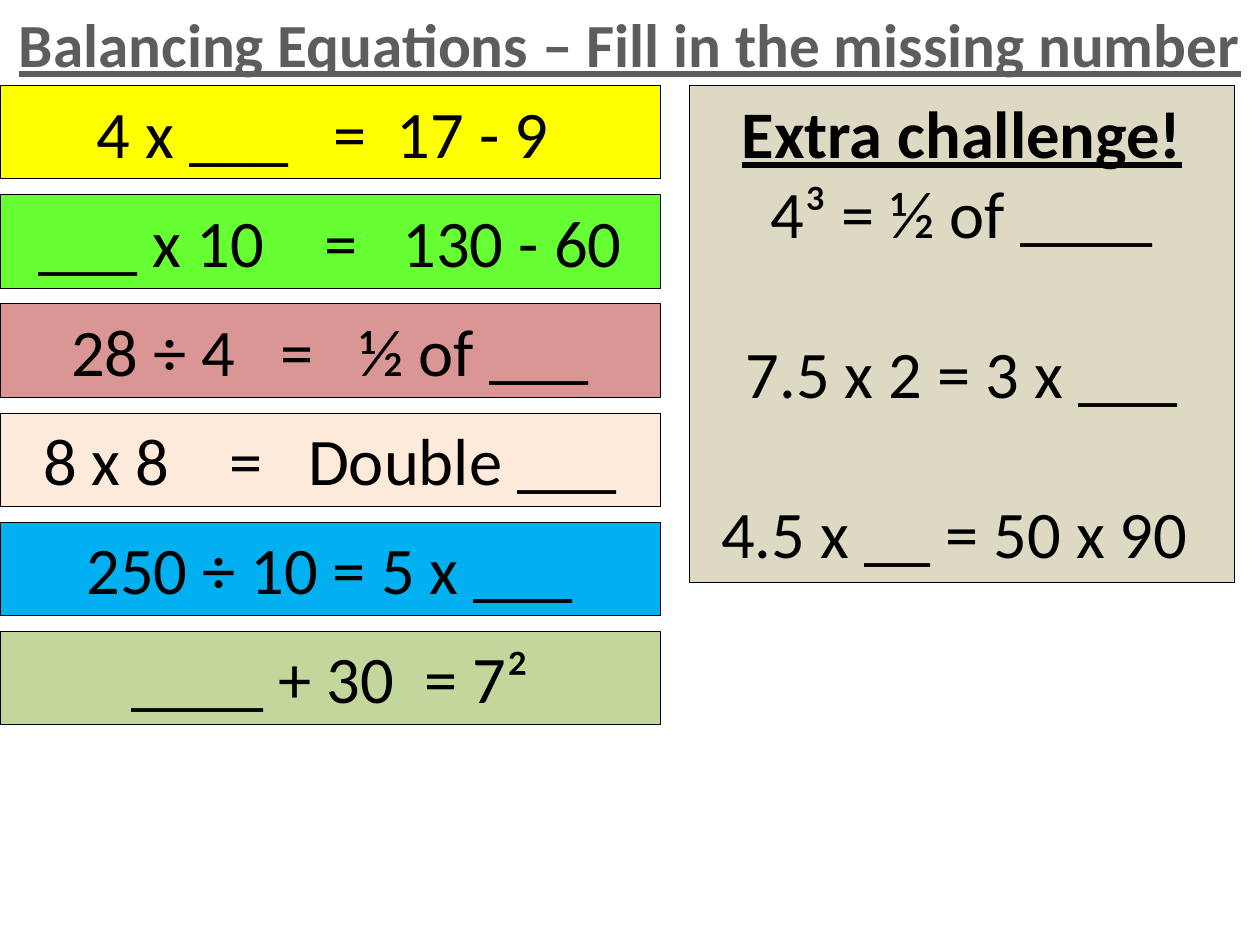
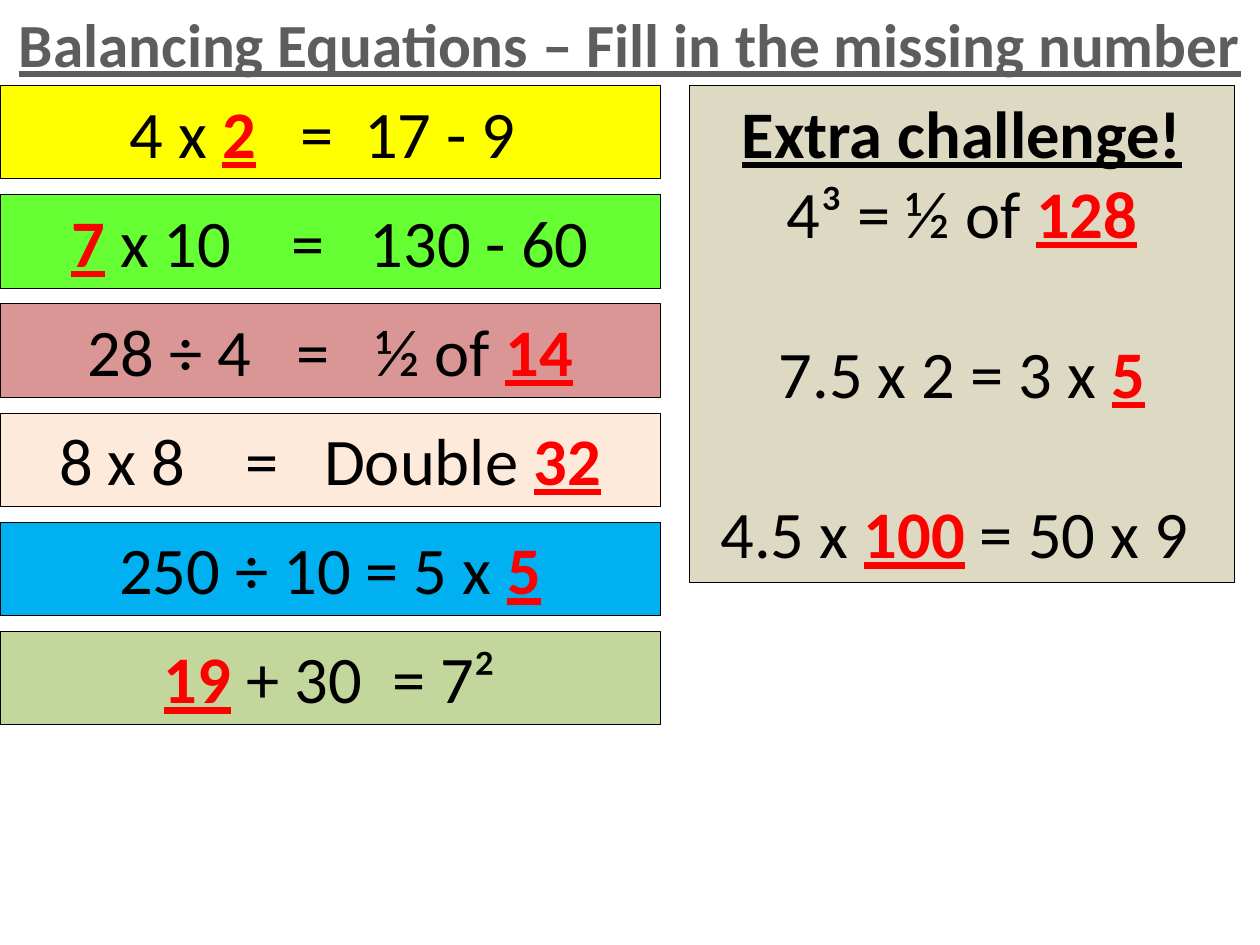
from dataclasses import dataclass

import pptx
import pptx.dml.color
import pptx.enum.shapes
import pptx.enum.text
import pptx.util
from pptx.dml.color import RGBColor
from pptx.util import Inches, Pt

FONT = "Calibri"
BODY_SIZE = Pt(38)
SPACE_WIDTH = 8.6
BLACK = RGBColor(0x00, 0x00, 0x00)
TITLE_GREY = RGBColor(0x5D, 0x5D, 0x5D)
ANSWER_RED = RGBColor(0xFF, 0x00, 0x00)
YELLOW = RGBColor(0xFF, 0xFF, 0x00)
GREEN = RGBColor(0x66, 0xFF, 0x33)
ROSE = RGBColor(0xD9, 0x96, 0x94)
PEACH = RGBColor(0xFD, 0xEA, 0xDA)
BLUE = RGBColor(0x00, 0xB0, 0xF0)
OLIVE = RGBColor(0xC3, 0xD6, 0x9B)
SAND = RGBColor(0xDD, 0xD9, 0xC3)

TITLE = "Balancing Equations – Fill in the missing number"
CONTENT_TOP = 0.68
BAND_WIDTH, BAND_HEIGHT, BAND_PITCH = 5.24, 0.74, 0.866


@dataclass
class Equation:
    left: str
    right: str
    blank: str
    answer: str
    spaces_before: int = 1
    spaces_after: int = 1


BANDS = [
    (YELLOW, Equation("4 x ?", "17 - 9 ", "___", "2", 3, 2)),
    (GREEN, Equation("? x 10", "130 - 60", "___", "7", 4, 3)),
    (ROSE, Equation("28 ÷ 4", "½ of ?", "___", "14", 3, 3)),
    (PEACH, Equation("8 x 8", "Double ?", "___", "32", 4, 3)),
    (BLUE, Equation("250 ÷ 10", "5 x ?", "___", "5")),
    (OLIVE, Equation("? + 30", "7²", "____", "19", 2, 1)),
]
CHALLENGES = [
    Equation("4³", "½ of ?", "____", "128"),
    Equation("7.5 x 2", "3 x ?", "___", "5"),
]
LAST_QUESTION = Equation("4.5 x ?", "50 x 90 ", "__", "100")
LAST_SOLUTION = Equation("4.5 x ?", "50 x 9 ", "__", "100")


def add_run(paragraph, text, color=BLACK, size=BODY_SIZE, strong=False):
    run = paragraph.add_run()
    run.text = text
    run.font.name = FONT
    run.font.size = size
    run.font.bold = strong
    run.font.underline = strong
    run.font.color.rgb = color
    return run


def add_gap(paragraph, spaces):
    run = add_run(paragraph, " ")
    if spaces > 1:
        run.font._element.set("spc", str(round((spaces - 1) * SPACE_WIDTH * 100)))


def add_side(paragraph, side, equation, solved):
    before, mark, after = side.partition("?")
    if mark and solved:
        if before:
            add_run(paragraph, before)
        add_run(paragraph, equation.answer, ANSWER_RED, strong=True)
        if after:
            add_run(paragraph, after)
    else:
        add_run(paragraph, side.replace("?", equation.blank))


def add_equation(paragraph, equation, solved):
    paragraph.alignment = pptx.enum.text.PP_ALIGN.CENTER
    add_side(paragraph, equation.left, equation, solved)
    add_gap(paragraph, equation.spaces_before)
    add_run(paragraph, "=")
    add_gap(paragraph, equation.spaces_after)
    add_side(paragraph, equation.right, equation, solved)


def add_panel(slide, left, top, width, height, color):
    shape = slide.shapes.add_shape(
        pptx.enum.shapes.MSO_SHAPE.RECTANGLE,
        Inches(left), Inches(top), Inches(width), Inches(height))
    shape.shadow.inherit = False
    shape.fill.solid()
    shape.fill.fore_color.rgb = color
    shape.line.color.rgb = BLACK
    shape.line.width = Pt(0.5)
    shape.text_frame.word_wrap = True
    shape.text_frame.vertical_anchor = pptx.enum.text.MSO_ANCHOR.TOP
    return shape.text_frame


def set_title(slide):
    title = slide.shapes.title
    title.left, title.top = Inches(0), Inches(0)
    title.width, title.height = Inches(10), Inches(0.69)
    text_frame = title.text_frame
    text_frame.auto_size = pptx.enum.text.MSO_AUTO_SIZE.NONE
    text_frame.vertical_anchor = pptx.enum.text.MSO_ANCHOR.TOP
    paragraph = text_frame.paragraphs[0]
    paragraph.alignment = pptx.enum.text.PP_ALIGN.CENTER
    add_run(paragraph, TITLE, TITLE_GREY, Pt(35), strong=True)


def add_challenge(slide, equations, solved):
    text_frame = add_panel(slide, 5.47, CONTENT_TOP, 4.33, 3.94, SAND)
    heading = text_frame.paragraphs[0]
    heading.alignment = pptx.enum.text.PP_ALIGN.CENTER
    add_run(heading, "Extra challenge!", strong=True)
    for index, equation in enumerate(equations):
        paragraph = text_frame.add_paragraph()
        paragraph.space_before = Pt(46 if index else 0)
        add_equation(paragraph, equation, solved)


def add_exercise_slide(presentation, solved):
    slide = presentation.slides.add_slide(presentation.slide_layouts[5])
    set_title(slide)
    for index, (color, equation) in enumerate(BANDS):
        top = CONTENT_TOP + index * BAND_PITCH
        text_frame = add_panel(slide, 0, top, BAND_WIDTH, BAND_HEIGHT, color)
        add_equation(text_frame.paragraphs[0], equation, solved)
    last = LAST_SOLUTION if solved else LAST_QUESTION
    add_challenge(slide, CHALLENGES + [last], solved)


def main():
    presentation = pptx.Presentation()
    presentation.slide_width = Inches(10)
    presentation.slide_height = Inches(7.5)
    for solved in (False, True):
        add_exercise_slide(presentation, solved)
    presentation.save("out.pptx")


if __name__ == "__main__":
    main()
